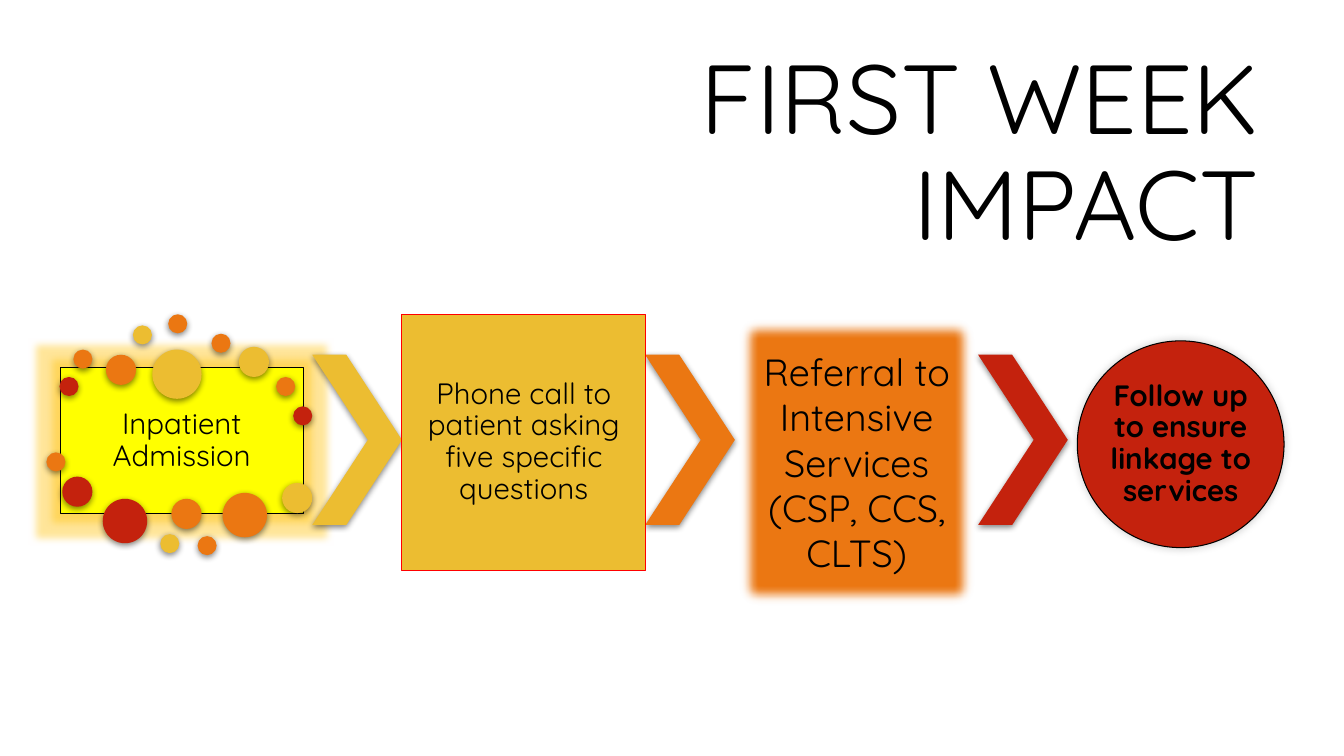
from lxml.etree import SubElement
from pptx import Presentation
from pptx.dml.color import RGBColor
from pptx.enum.shapes import MSO_SHAPE
from pptx.enum.text import MSO_ANCHOR, PP_ALIGN
from pptx.oxml.ns import qn
from pptx.util import Cm, Pt

COLORS = {
    "black": "000000", "yellow": "FFFF00", "gold": "ECBD31",
    "orange": "EB7712", "red": "C4220D", "outline": "FF0000", "glow": "FFC000",
}
FONT = "Quicksand"
DOT_SIZES = {"small": 0.48, "medium": 0.76, "large": 1.12, "huge": 1.24}
# left, top, size, colour
DOTS = [
    (1.5, 9.5, "small", "red"), (1.85, 8.81, "small", "orange"),
    (2.67, 8.94, "medium", "orange"), (3.35, 8.2, "small", "gold"),
    (4.24, 7.92, "small", "orange"), (5.33, 8.41, "small", "orange"),
    (6.02, 8.74, "medium", "gold"), (6.96, 9.5, "small", "orange"),
    (7.39, 10.24, "small", "red"), (3.84, 8.81, "huge", "gold"),
    (1.17, 11.4, "small", "orange"), (1.57, 12.01, "medium", "red"),
    (2.59, 12.57, "large", "red"), (4.04, 13.46, "small", "gold"),
    (4.32, 12.57, "medium", "orange"), (4.98, 13.51, "small", "orange"),
    (5.61, 12.42, "large", "orange"), (7.11, 12.17, "medium", "gold"),
]
CHEVRON_LEFT, CHEVRON_STEP = 7.87, 8.39


def rgb(name):
    return RGBColor.from_string(COLORS[name])


def add_effect(shape, kind, color=None, opacity=100, **attributes):
    """Add a glow, shadow or soft edge to the shape's effect list."""
    effects = shape._element.spPr.find(qn("a:effectLst"))
    effect = SubElement(effects, qn(f"a:{kind}"))
    for name, value in attributes.items():
        effect.set(name, str(int(value)))
    if color:
        tint = SubElement(effect, qn("a:srgbClr"), val=COLORS[color])
        SubElement(tint, qn("a:alpha"), val=str(opacity * 1000))


def add_filled_shape(slide, kind, box, fill, line=None):
    shape = slide.shapes.add_shape(kind, *(Cm(length) for length in box))
    shape.shadow.inherit = False
    shape.fill.solid()
    shape.fill.fore_color.rgb = rgb(fill)
    if line:
        shape.line.color.rgb = rgb(line)
        shape.line.width = Pt(0.75)
    else:
        shape.line.fill.background()
    return shape


def add_raised_shape(slide, kind, box, fill):
    """Add a shape with a soft shadow straight below it."""
    shape = add_filled_shape(slide, kind, box, fill)
    add_effect(shape, "outerShdw", "black", 48,
               blurRad=Pt(4.5), dist=Pt(1.5), dir=90 * 60000)
    return shape


def write_text(shape, text, size, align=PP_ALIGN.CENTER, spacing=0.9,
               bold=False, inset=0.08):
    text_frame = shape.text_frame
    text_frame.word_wrap = True
    text_frame.vertical_anchor = MSO_ANCHOR.MIDDLE
    text_frame.margin_left = text_frame.margin_right = Cm(inset)
    text_frame.margin_top = text_frame.margin_bottom = Cm(inset)
    text_frame.text = text
    paragraph = text_frame.paragraphs[0]
    paragraph.alignment = align
    paragraph.line_spacing = spacing
    font = paragraph.runs[0].font
    font.name = FONT
    font.size = Pt(size)
    font.bold = bold
    font.color.rgb = rgb("black")


def add_title(slide, text):
    title = slide.shapes.add_textbox(Cm(8.05), Cm(2.13), Cm(23.93), Cm(3.58))
    write_text(title, text, 70, align=PP_ALIGN.RIGHT, inset=0.25)


def add_admission(slide):
    box = add_filled_shape(slide, MSO_SHAPE.RECTANGLE,
                           (1.52, 9.27, 6.12, 3.68), "yellow", "black")
    add_effect(box, "glow", "glow", 40, rad=Pt(11))
    write_text(box, "Inpatient Admission", 21)
    for left, top, size, color in DOTS:
        diameter = DOT_SIZES[size]
        add_raised_shape(slide, MSO_SHAPE.OVAL,
                         (left, top, diameter, diameter), color)


def add_chevrons(slide):
    for index, color in enumerate(("gold", "orange", "red")):
        left = CHEVRON_LEFT + index * CHEVRON_STEP
        chevron = add_raised_shape(slide, MSO_SHAPE.CHEVRON,
                                   (left, 8.94, 2.26, 4.29), color)
        chevron.adjustments[0] = 0.62


def add_phone_call(slide):
    box = add_filled_shape(slide, MSO_SHAPE.RECTANGLE,
                           (10.13, 7.92, 6.14, 6.45), "gold", "outline")
    write_text(box, "Phone call to patient asking five specific questions", 21)


def add_referral(slide):
    box = add_filled_shape(slide, MSO_SHAPE.RECTANGLE,
                           (18.52, 7.92, 6.14, 7.44), "orange")
    add_effect(box, "softEdge", rad=Pt(9))
    write_text(box, "Referral to Intensive Services (CSP, CCS, CLTS)", 27,
               spacing=1.0, inset=0.1)


def add_follow_up(slide):
    circle = add_filled_shape(slide, MSO_SHAPE.OVAL,
                              (27.15, 8.59, 5.21, 5.21), "red", "black")
    add_effect(circle, "outerShdw", "black", 20,
               blurRad=Pt(6), dist=0, dir=315 * 60000)
    write_text(circle, "Follow up to ensure linkage to services", 21,
               bold=True, inset=0)


def main():
    presentation = Presentation()
    presentation.slide_width = Cm(33.87)
    presentation.slide_height = Cm(19.05)
    slide = presentation.slides.add_slide(presentation.slide_layouts[6])
    add_title(slide, "FIRST WEEK IMPACT")
    add_admission(slide)
    add_chevrons(slide)
    add_phone_call(slide)
    add_referral(slide)
    add_follow_up(slide)
    presentation.save("out.pptx")


if __name__ == "__main__":
    main()
